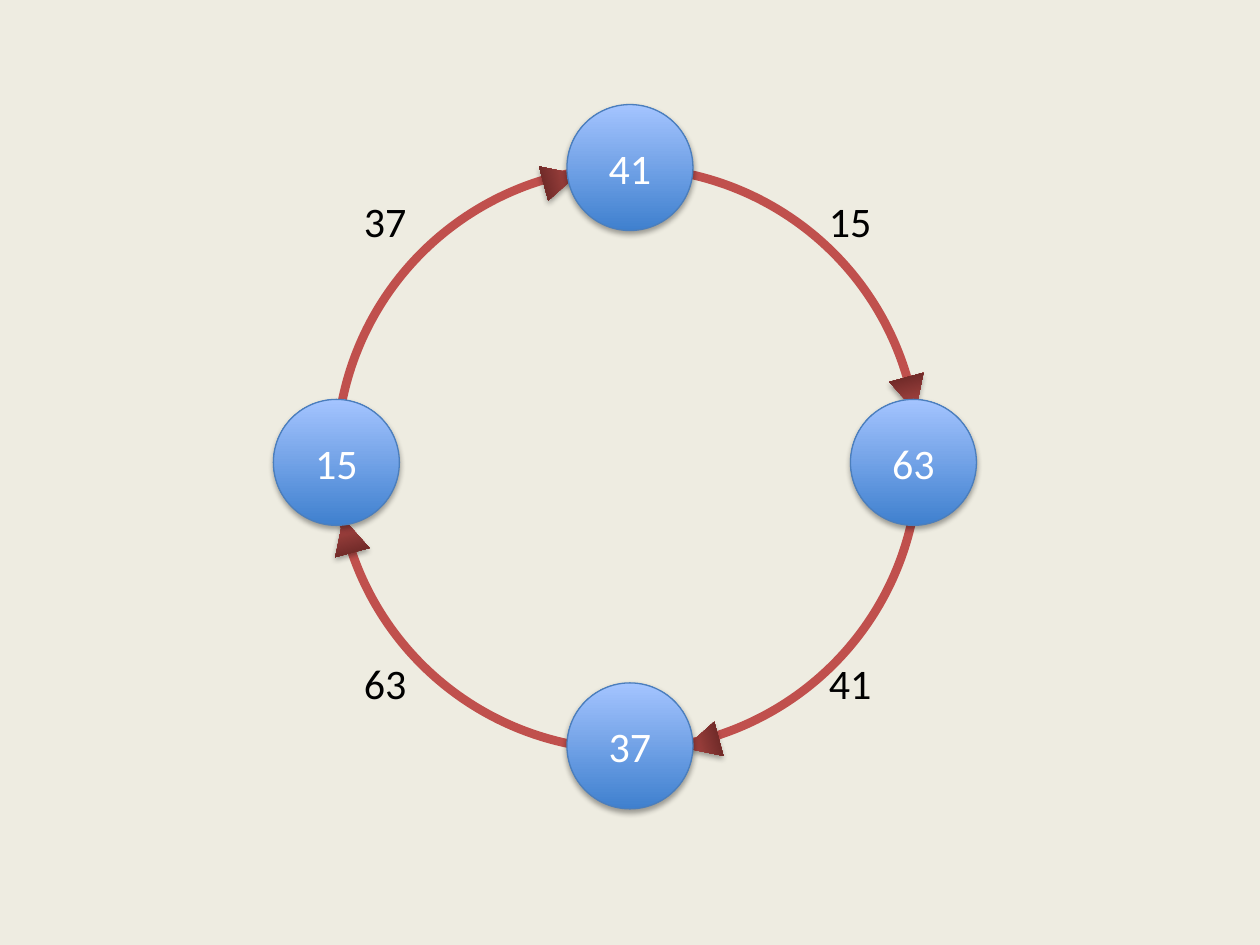
import pptx
import pptx.util
from lxml import etree
from pptx.dml.color import RGBColor
from pptx.enum.shapes import MSO_SHAPE
from pptx.enum.text import MSO_ANCHOR, MSO_AUTO_SIZE, PP_ALIGN
from pptx.oxml.ns import qn
from pptx.util import Inches

BACKGROUND = RGBColor(0xEE, 0xEC, 0xE1)
RED = RGBColor(0xC0, 0x50, 0x4D)
DARK_RED = RGBColor(0x63, 0x25, 0x23)
BLUE = RGBColor(0x3F, 0x80, 0xCE)
LIGHT_BLUE = RGBColor(0xA4, 0xC4, 0xFF)
OUTLINE_BLUE = RGBColor(0x4B, 0x7E, 0xBC)
BLACK = RGBColor(0, 0, 0)
WHITE = RGBColor(0xFF, 0xFF, 0xFF)


class CycleDiagram:
    font_name = "Calibri"
    font_size = 24
    node_size = 1
    arrow_size = 0.28

    def __init__(self, slide):
        self.slide = slide
        self.start_group()

    def start_group(self):
        self.shapes = self.slide.shapes.add_group_shape().shapes

    def shape(self, kind, left, top, size):
        shape = self.shapes.add_shape(
            kind, Inches(left), Inches(top), Inches(size), Inches(size))
        shape.shadow.inherit = False
        return shape

    def gradient(self, shape, colors, angle):
        shape.fill.gradient()
        shape.fill.gradient_angle = angle
        for stop, color in zip(shape.fill.gradient_stops, colors):
            stop.color.rgb = color

    def drop_shadow(self, shape):
        effects = shape.element.spPr.find(qn("a:effectLst"))
        shadow = etree.SubElement(
            effects, qn("a:outerShdw"), blurRad="40000", dist="23000",
            dir="5400000", rotWithShape="0")
        color = etree.SubElement(shadow, qn("a:srgbClr"), val="000000")
        etree.SubElement(color, qn("a:alpha"), val="35000")

    def add_text(self, paragraph, text, color):
        run = paragraph.add_run()
        run.text = text
        run.font.name = self.font_name
        run.font.size = pptx.util.Pt(self.font_size)
        run.font.color.rgb = color

    def ring(self, left, top, size):
        ring = self.shape(MSO_SHAPE.OVAL, left, top, size)
        ring.fill.background()
        ring.line.color.rgb = RED
        ring.line.width = pptx.util.Pt(5)

    def label(self, text, left, top):
        box = self.shapes.add_textbox(
            Inches(left), Inches(top), Inches(0.54), Inches(0.5))
        box.text_frame.word_wrap = False
        box.text_frame.auto_size = MSO_AUTO_SIZE.SHAPE_TO_FIT_TEXT
        self.add_text(box.text_frame.paragraphs[0], text, BLACK)

    def arrowhead(self, left, top, rotation):
        arrow = self.shape(
            MSO_SHAPE.ISOSCELES_TRIANGLE, left, top, self.arrow_size)
        arrow.rotation = rotation
        self.gradient(arrow, (RED, DARK_RED), 270)
        arrow.line.fill.background()
        self.drop_shadow(arrow)

    def node(self, text, left, top):
        node = self.shape(MSO_SHAPE.OVAL, left, top, self.node_size)
        self.gradient(node, (BLUE, LIGHT_BLUE), 90)
        node.line.color.rgb = OUTLINE_BLUE
        node.line.width = pptx.util.Pt(0.75)
        self.drop_shadow(node)
        node.text_frame.vertical_anchor = MSO_ANCHOR.MIDDLE
        paragraph = node.text_frame.paragraphs[0]
        paragraph.alignment = PP_ALIGN.CENTER
        self.add_text(paragraph, text, WHITE)


def main():
    presentation = pptx.Presentation()
    presentation.slide_width = Inches(10)
    presentation.slide_height = Inches(7.5)
    slide = presentation.slides.add_slide(presentation.slide_layouts[6])
    slide.background.fill.solid()
    slide.background.fill.fore_color.rgb = BACKGROUND
    diagram = CycleDiagram(slide)

    # Ring with a label beside each quarter
    diagram.ring(2.67, 1.33, 4.62)
    label_columns, label_rows = (2.79, 6.48), (1.5, 5.17)
    label_texts = (("37", "15"), ("63", "41"))
    for top, texts in zip(label_rows, label_texts):
        for left, text in zip(label_columns, texts):
            diagram.label(text, left, top)

    # Clockwise arrowheads, a quarter turn apart
    arrow_places = ((4.31, 1.28), (7.09, 2.99), (5.43, 5.76), (2.62, 4.11))
    for index, (left, top) in enumerate(arrow_places):
        diagram.arrowhead(left, top, 75 + 90 * index)

    # Nodes on top of the ring
    diagram.start_group()
    for text, left, top in (("15", 2.17, 3.17), ("41", 4.5, 0.83),
                            ("63", 6.75, 3.17), ("37", 4.5, 5.42)):
        diagram.node(text, left, top)

    presentation.save("out.pptx")


if __name__ == "__main__":
    main()
